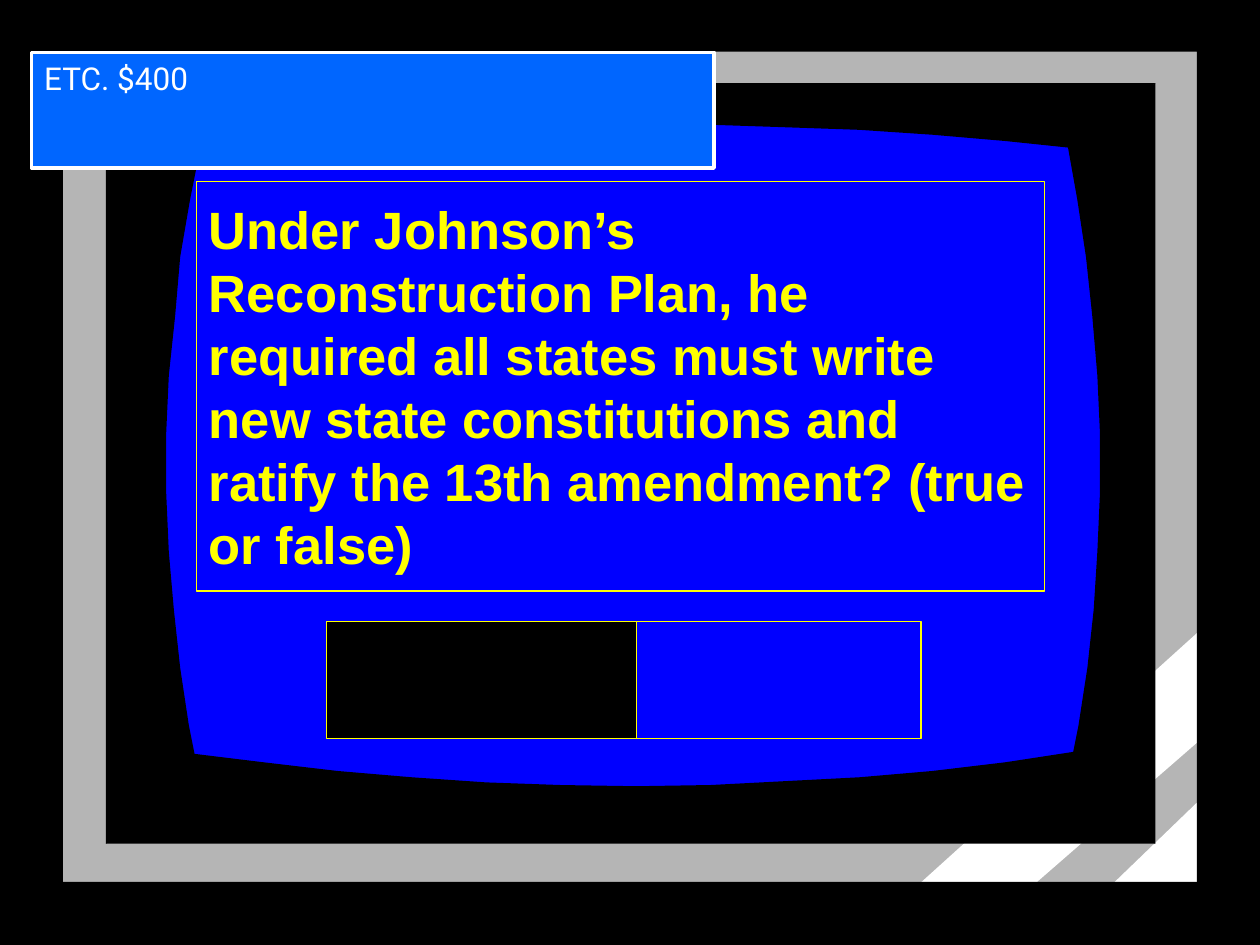
"""Build a game-show question slide framed by a television screen."""
from pptx import Presentation
from pptx.dml.color import RGBColor
from pptx.enum import shapes, text
from pptx.util import Pt

BLACK, GRAY, WHITE = "000000", "B5B5B5", "FFFFFF"
BLUE, LABEL_BLUE, YELLOW = "0000FF", "0066FF", "FFFF00"


def color(value):
    return RGBColor.from_string(value)


class QuestionSlide:
    def __init__(self, slide):
        self.slide = slide

    def paint(self, shape, fill=None, line=None, width=0.75):
        if fill:
            shape.fill.solid()
            shape.fill.fore_color.rgb = color(fill)
        else:
            shape.fill.background()
        if line:
            shape.line.color.rgb = color(line)
            shape.line.width = Pt(width)
        else:
            shape.line.fill.background()

    def box(self, left, top, width, height, fill=None, line=None):
        shape = self.slide.shapes.add_shape(
            shapes.MSO_SHAPE.RECTANGLE, Pt(left), Pt(top), Pt(width), Pt(height))
        shape.shadow.inherit = False
        self.paint(shape, fill, line)
        return shape

    def outline(self, points, fill):
        start, *rest = [(Pt(x), Pt(y)) for x, y in points]
        builder = self.slide.shapes.build_freeform(*start, scale=1)
        builder.add_line_segments(rest)
        shape = builder.convert_to_shape()
        shape.shadow.inherit = False
        self.paint(shape, fill)

    def label(self, shape, words, font, size, ink, anchor, inset, bold=False):
        frame = shape.text_frame
        frame.word_wrap = True
        frame.auto_size = text.MSO_AUTO_SIZE.NONE
        frame.vertical_anchor = anchor
        frame.margin_left = frame.margin_right = Pt(7.2)
        frame.margin_top = frame.margin_bottom = Pt(inset)
        frame.text = words
        paragraph = frame.paragraphs[0]
        paragraph.alignment = text.PP_ALIGN.LEFT
        paragraph.font.name = font
        paragraph.font.size = Pt(size)
        paragraph.font.bold = bold
        paragraph.font.color.rgb = color(ink)
        return paragraph

    def heading(self, words, left, top, width, height):
        title = self.slide.shapes.title
        title.left, title.top = Pt(left), Pt(top)
        title.width, title.height = Pt(width), Pt(height)
        self.paint(title, LABEL_BLUE, WHITE, 2.25)
        self.label(title, words, "Roboto", 18, WHITE, text.MSO_ANCHOR.TOP, 3.6)
        title.element.getparent().append(title.element)


def draw_screen(page):
    page.box(16.6, 9.4, 688.3, 530.6, GRAY)
    page.outline([(558.7, 533.5), (703.4, 407.5), (703.4, 344.2), (493.9, 533.5)], WHITE)
    page.outline([(703.4, 487.4), (651.6, 533.5), (604.1, 535.7), (703.4, 439.9)], WHITE)
    page.box(77, 63.4, 552.2, 388.8, BLUE)

    left, right, top, bottom = 60.5, 660.2, 47.5, 482.1
    side_ys = [81.4, 113.8, 146.9, 180.7, 214.6, 247.7, 281.5,
               315.4, 348.5, 381.6, 414.7, 447.1, 450.7]
    left_xs = [115.2, 108.7, 103, 100.1, 96.5, 95, 95,
               96.5, 99.4, 103, 108, 114.5, 115.2]
    right_xs = [609.8, 615.6, 620.6, 624.2, 627.1, 628.6, 628.6,
                627.1, 625, 621.4, 616.3, 609.8, 609.8]
    for edge, curve in ((left, left_xs), (right, right_xs)):
        page.outline([(edge, top), *zip(curve, side_ys), (edge, bottom)], BLACK)

    across_xs = [617, 574.6, 532.8, 491, 448.6, 406.1, 363.6,
                 320.4, 277.9, 235.4, 193, 150.5, 109.4, 104.4]
    top_ys = [85, 80.6, 77, 74.2, 72.7, 71.3, 70.6,
              71.3, 72.7, 74.2, 77, 79.9, 83.5, 85]
    bottom_ys = [429.1, 435.6, 440.6, 444.2, 446.4, 448.6, 449.3,
                 448.6, 447.1, 444.2, 440.6, 435.6, 430.6, 429.1]
    for edge, curve in ((top, top_ys), (bottom, bottom_ys)):
        page.outline([(right, edge), *zip(across_xs, curve), (left, edge)], BLACK)

    page.outline([(0, 0), (0, 540), (720, 540), (700.6, 511.9),
                  (36, 511.9), (36, 10.1)], BLACK)
    page.outline([(720, 0), (0, 0), (18.7, 29.5), (684, 29.5),
                  (684, 540), (720, 540)], BLACK)
    page.box(14.4, 504, 690.5, 36, BLACK)


def main():
    deck = Presentation()
    deck.slide_width, deck.slide_height = Pt(720), Pt(540)
    page = QuestionSlide(deck.slides.add_slide(deck.slide_layouts[5]))
    draw_screen(page)

    question = page.box(112.3, 103.7, 484.6, 234, line=YELLOW)
    wording = page.label(
        question,
        "Under Johnson’s Reconstruction Plan, he required all states must write "
        "new state constitutions and ratify the 13th amendment? (true or false)",
        "Arial", 30, YELLOW, text.MSO_ANCHOR.MIDDLE, 7.2, bold=True)
    wording.line_spacing = Pt(36)

    page.box(206, 355, 320.4, 67, line=YELLOW)
    page.box(186.5, 355, 177.1, 67, BLACK, YELLOW)
    page.heading("ETC. $400", 18, 30, 390, 66)
    deck.save("out.pptx")


if __name__ == "__main__":
    main()
